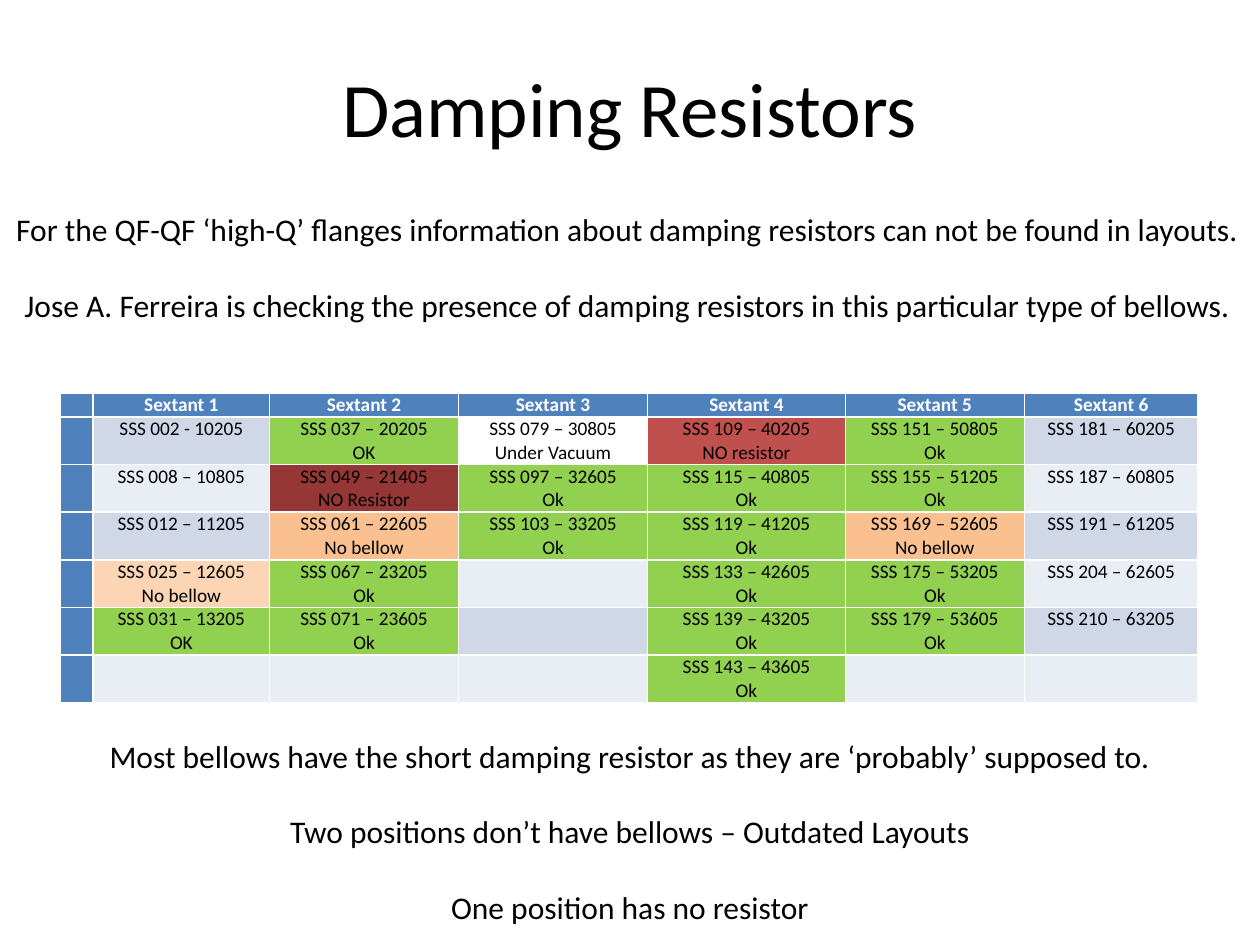
from pptx import Presentation
from pptx.dml.color import RGBColor
from pptx.enum.text import MSO_ANCHOR, PP_ALIGN
from pptx.oxml import parse_xml
from pptx.oxml.ns import nsdecls
from pptx.util import Inches, Pt

COLORS = {
    "text": "000000",
    "white": "FFFFFF",
    "header": "4F81BD",
    "odd band": "D0D8E8",
    "even band": "E9EDF4",
    "ok": "92D050",
    "no bellow": "FAC090",
    "pale no bellow": "FCD5B5",
    "no resistor": "C0504D",
    "dark no resistor": "953735",
}
STATUS_FILLS = {
    "OK": "ok",
    "Ok": "ok",
    "Under Vacuum": "white",
    "No bellow": "no bellow",
    "NO resistor": "no resistor",
    "NO Resistor": "dark no resistor",
}
SPECIAL_FILLS = {"SSS 025 – 12605": "pale no bellow"}

SEXTANTS = [
    [("SSS 002 - 10205",), ("SSS 008 – 10805",), ("SSS 012 – 11205",),
     ("SSS 025 – 12605", "No bellow"), ("SSS 031 – 13205", "OK")],
    [("SSS 037 – 20205", "OK"), ("SSS 049 – 21405", "NO Resistor"),
     ("SSS 061 – 22605", "No bellow"), ("SSS 067 – 23205", "Ok"),
     ("SSS 071 – 23605", "Ok")],
    [("SSS 079 – 30805", "Under Vacuum"), ("SSS 097 – 32605", "Ok"),
     ("SSS 103 – 33205", "Ok")],
    [("SSS 109 – 40205", "NO resistor"), ("SSS 115 – 40805", "Ok"),
     ("SSS 119 – 41205", "Ok"), ("SSS 133 – 42605", "Ok"),
     ("SSS 139 – 43205", "Ok"), ("SSS 143 – 43605", "Ok")],
    [("SSS 151 – 50805", "Ok"), ("SSS 155 – 51205", "Ok"),
     ("SSS 169 – 52605", "No bellow"), ("SSS 175 – 53205", "Ok"),
     ("SSS 179 – 53605", "Ok")],
    [("SSS 181 – 60205",), ("SSS 187 – 60805",), ("SSS 191 – 61205",),
     ("SSS 204 – 62605",), ("SSS 210 – 63205",)],
]
COLUMN_WIDTHS = [0.26, 1.4, 1.5, 1.5, 1.57, 1.42, 1.38]
HEADER_HEIGHT, BODY_HEIGHT = 0.19, 0.37
POSITION_ROWS = max(len(positions) for positions in SEXTANTS)

INTRO = [
    "For the QF-QF ‘high-Q’ flanges information about damping resistors can not be found in layouts.",
    "Jose A. Ferreira is checking the presence of damping resistors in this particular type of bellows.",
]
FINDINGS = [
    "Most bellows have the short damping resistor as they are ‘probably’ supposed to.",
    "Two positions don’t have bellows – Outdated Layouts",
    "One position has no resistor",
]


def rgb(name):
    return RGBColor.from_string(COLORS[name])


def style_paragraph(paragraph, size, color="text", bold=False):
    paragraph.alignment = PP_ALIGN.CENTER
    paragraph.font.name = "Calibri"
    paragraph.font.size = Pt(size)
    paragraph.font.bold = bold
    paragraph.font.color.rgb = rgb(color)


def add_title(slide, text):
    title = slide.shapes.title
    title.left, title.top = Inches(0.5), Inches(0.22)
    title.width, title.height = Inches(9), Inches(1.25)
    title.text_frame.text = text
    title.text_frame.vertical_anchor = MSO_ANCHOR.MIDDLE
    style_paragraph(title.text_frame.paragraphs[0], 44)


def add_statements(slide, statements, left, top, height):
    box = slide.shapes.add_textbox(Inches(left), Inches(top), Inches(10), Inches(height))
    frame = box.text_frame
    frame.word_wrap = True
    frame.text = "\n".join(statements)
    for index, paragraph in enumerate(frame.paragraphs):
        style_paragraph(paragraph, 18)
        if index:
            paragraph.space_before = Pt(21.5)


def fill_cell(cell, lines, fill, color="text", bold=False):
    cell.margin_left = cell.margin_right = Inches(0.07)
    cell.margin_top = cell.margin_bottom = 0
    cell.fill.solid()
    cell.fill.fore_color.rgb = rgb(fill)
    cell.text = "\n".join(lines)
    for paragraph in cell.text_frame.paragraphs:
        style_paragraph(paragraph, 11, color, bold)
        if not paragraph.text:
            paragraph._p.append(parse_xml(f'<a:endParaRPr {nsdecls("a")} sz="1100"/>'))


def position_fill(position, row):
    if len(position) == 2:
        name, status = position
        return SPECIAL_FILLS.get(name, STATUS_FILLS[status])
    return "odd band" if row % 2 else "even band"


def add_sextant_table(slide):
    height = HEADER_HEIGHT + POSITION_ROWS * BODY_HEIGHT
    table = slide.shapes.add_table(
        POSITION_ROWS + 1, len(COLUMN_WIDTHS),
        Inches(0.48), Inches(3.12), Inches(sum(COLUMN_WIDTHS)), Inches(height),
    ).table
    table.first_col = True
    for column, width in zip(table.columns, COLUMN_WIDTHS):
        column.width = Inches(width)
    for index, row in enumerate(table.rows):
        row.height = Inches(BODY_HEIGHT if index else HEADER_HEIGHT)
        fill_cell(table.cell(index, 0), [], "header")
    for column, positions in enumerate(SEXTANTS, start=1):
        fill_cell(table.cell(0, column), [f"Sextant {column}"], "header", "white", True)
        for row in range(1, POSITION_ROWS + 1):
            position = positions[row - 1] if row <= len(positions) else ()
            fill_cell(table.cell(row, column), position, position_fill(position, row))


def main():
    presentation = Presentation()
    presentation.slide_width, presentation.slide_height = Inches(10), Inches(7.5)
    slide = presentation.slides.add_slide(presentation.slide_layouts[5])
    add_title(slide, "Damping Resistors")
    add_sextant_table(slide)
    add_statements(slide, INTRO, -0.02, 1.62, 1.01)
    add_statements(slide, FINDINGS, 0, 5.8, 1.62)
    presentation.save("out.pptx")


if __name__ == "__main__":
    main()
